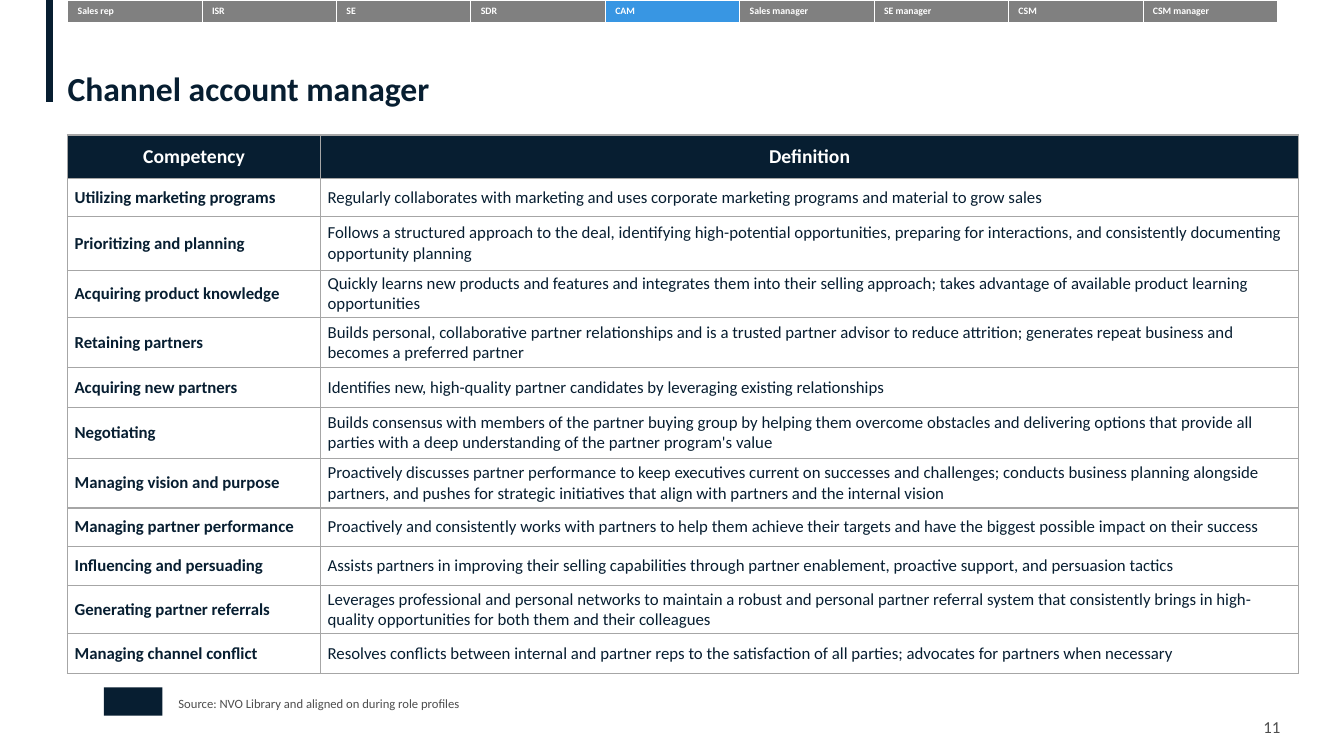
from lxml.etree import SubElement
from pptx import Presentation
from pptx.dml.color import RGBColor
from pptx.enum.shapes import MSO_CONNECTOR, MSO_SHAPE
from pptx.enum.text import MSO_ANCHOR as Anchor, PP_ALIGN as Align
from pptx.oxml.ns import qn
from pptx.util import Inches, Pt

FONT = "Calibri"
NAVY, WHITE, GREY, BLUE, RULE, SMALL = (
    "071E31", "FFFFFF", "808080", "3896E3", "A6A6A6", "4D4D4D")

TITLE = "Channel account manager"
SOURCE = "Source: NVO Library and aligned on during role profiles"
PAGE = "11"
ROLES = ["Sales rep", "ISR", "SE", "SDR", "CAM", "Sales manager",
         "SE manager", "CSM", "CSM manager"]
CURRENT_ROLE = "CAM"
HEADINGS = ("Competency", "Definition")
# Competency, definition, row height in inches
COMPETENCIES = [
    ("Utilizing marketing programs",
     "Regularly collaborates with marketing and uses corporate marketing "
     "programs and material to grow sales", 0.38),
    ("Prioritizing and planning",
     "Follows a structured approach to the deal, identifying high-potential "
     "opportunities, preparing for interactions, and consistently "
     "documenting opportunity planning", 0.53),
    ("Acquiring product knowledge",
     "Quickly learns new products and features and integrates them into "
     "their selling approach; takes advantage of available product "
     "learning opportunities", 0.47),
    ("Retaining partners",
     "Builds personal, collaborative partner relationships and is a trusted "
     "partner advisor to reduce attrition; generates repeat business "
     "and becomes a preferred partner", 0.5),
    ("Acquiring new partners",
     "Identifies new, high-quality partner candidates by leveraging "
     "existing relationships", 0.39),
    ("Negotiating",
     "Builds consensus with members of the partner buying group by helping "
     "them overcome obstacles and delivering options that provide all "
     "parties with a deep understanding of the partner program's value", 0.51),
    ("Managing vision and purpose",
     "Proactively discusses partner performance to keep executives current "
     "on successes and challenges; conducts business planning "
     "alongside partners, and pushes for strategic initiatives that align "
     "with partners and the internal vision", 0.49),
    ("Managing partner performance",
     "Proactively and consistently works with partners to help them achieve "
     "their targets and have the biggest possible impact on their success",
     0.38),
    ("Influencing and persuading",
     "Assists partners in improving their selling capabilities through "
     "partner enablement, proactive support, and persuasion tactics", 0.39),
    ("Generating partner referrals",
     "Leverages professional and personal networks to maintain a robust and "
     "personal partner referral system that consistently brings in "
     "high-quality opportunities for both them and their colleagues", 0.48),
    ("Managing channel conflict",
     "Resolves conflicts between internal and partner reps to the "
     "satisfaction of all parties; advocates for partners when necessary",
     0.39),
]

LEFT = 0.67
NAV_WIDTH, NAV_HEIGHT = 12, 0.22
TABLE_TOP, HEADING_HEIGHT = 1.34, 0.43
COLUMNS = (2.51, 9.7)


def color(hex_text):
    return RGBColor.from_string(hex_text)


def write(frame, text, size, ink, bold=False, align=Align.LEFT):
    frame.word_wrap = True
    paragraph = frame.paragraphs[0]
    paragraph.alignment = align
    run = paragraph.add_run()
    run.text = text
    run.font.name, run.font.size, run.font.bold = FONT, Pt(size), bold
    run.font.color.rgb = color(ink)
    return paragraph


def add_label(slide, box, text, size, ink, bold=False, anchor=Anchor.TOP):
    frame = slide.shapes.add_textbox(*map(Inches, box)).text_frame
    frame.margin_left = frame.margin_right = 0
    frame.margin_top = frame.margin_bottom = 0
    frame.vertical_anchor = anchor
    return write(frame, text, size, ink, bold)


def add_grid(slide, left, top, widths, heights):
    """Add a table without banding, sized by its columns and rows."""
    frame = slide.shapes.add_table(
        len(heights), len(widths), Inches(left), Inches(top),
        Inches(sum(widths)), Inches(sum(heights)))
    table = frame.table
    table.first_row = table.horz_banding = False
    for column, width in zip(table.columns, widths):
        column.width = Inches(width)
    for row, height in zip(table.rows, heights):
        row.height = Inches(height)
    return table


def style_cell(cell, border, points, fill=None):
    """Draw all four borders, then the fill, in the order the XML needs."""
    properties = cell._tc.get_or_add_tcPr()
    for side in ("a:lnL", "a:lnR", "a:lnT", "a:lnB"):
        line = SubElement(properties, qn(side), w=str(Pt(points)))
        solid = SubElement(line, qn("a:solidFill"))
        SubElement(solid, qn("a:srgbClr"), val=border)
    if fill:
        cell.fill.solid()
        cell.fill.fore_color.rgb = color(fill)
    else:
        cell.fill.background()


def add_role_bar(slide):
    widths = [NAV_WIDTH / len(ROLES)] * len(ROLES)
    bar = add_grid(slide, LEFT, 0, widths, [NAV_HEIGHT])
    for column, role in enumerate(ROLES):
        cell = bar.cell(0, column)
        style_cell(cell, WHITE, 0.5, BLUE if role == CURRENT_ROLE else GREY)
        write(cell.text_frame, role, 7, WHITE, True)


def add_competencies(slide):
    heights = [HEADING_HEIGHT] + [height for *_, height in COMPETENCIES]
    table = add_grid(slide, LEFT, TABLE_TOP, COLUMNS, heights)
    rows = [HEADINGS] + [entry[:2] for entry in COMPETENCIES]
    for r, row in enumerate(rows):
        heading = r == 0
        for c, text in enumerate(row):
            cell = table.cell(r, c)
            cell.vertical_anchor = Anchor.MIDDLE
            cell.margin_left = Inches(0 if heading else 0.07)
            cell.margin_right = cell.margin_top = cell.margin_bottom = 0
            style_cell(cell, RULE, 1, NAVY if heading else None)
            if heading:
                write(cell.text_frame, text, 14, WHITE, True, Align.CENTER)
            else:
                write(cell.text_frame, text, 12, NAVY, c == 0)


def add_accent(slide):
    accent = slide.shapes.add_connector(
        MSO_CONNECTOR.STRAIGHT, Inches(0.49), 0, Inches(0.49), Inches(1.01))
    accent.line.color.rgb = color(NAVY)
    accent.line.width = Pt(5)
    SubElement(accent._element.spPr, qn("a:effectLst"))


def add_logo_block(slide):
    block = slide.shapes.add_shape(
        MSO_SHAPE.RECTANGLE, *map(Inches, (1.03, 6.82, 0.58, 0.28)))
    block.shadow.inherit = False
    block.fill.solid()
    block.fill.fore_color.rgb = color(NAVY)
    block.line.fill.background()


def main():
    deck = Presentation()
    deck.slide_width, deck.slide_height = Inches(13.33), Inches(7.5)
    slide = deck.slides.add_slide(deck.slide_layouts[6])
    add_accent(slide)
    add_logo_block(slide)
    title = add_label(slide, (LEFT, 0.7, 12.41, 0.38), TITLE, 24, NAVY, True,
                      Anchor.BOTTOM)
    title.line_spacing = 0.9
    add_competencies(slide)
    add_label(slide, (12.53, 7.11, 0.34, 0.2), PAGE, 12, SMALL,
              anchor=Anchor.MIDDLE)
    add_label(slide, (1.77, 6.9, 6.49, 0.15), SOURCE, 9, SMALL)
    add_role_bar(slide)
    deck.save("out.pptx")


if __name__ == "__main__":
    main()
